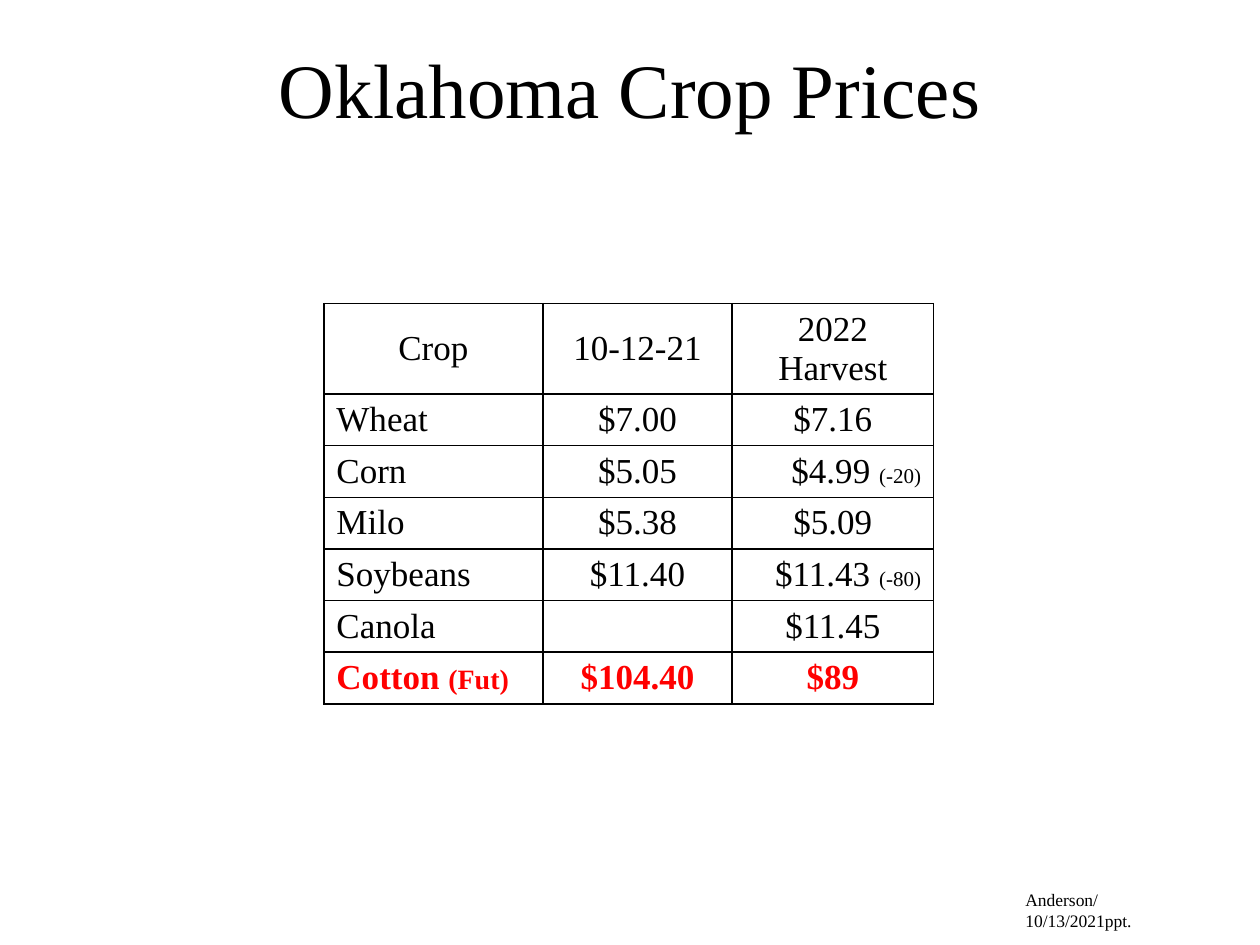
import pptx
import pptx.dml.color
import pptx.enum.text
import pptx.oxml
import pptx.oxml.ns
import pptx.util

Inches = pptx.util.Inches
Pt = pptx.util.Pt
ALIGN = pptx.enum.text.PP_ALIGN
ANCHOR = pptx.enum.text.MSO_ANCHOR

COLORS = {"text": "000000", "highlight": "FF0000", "border": "000000"}
FONT = "Times New Roman"
COLUMN_WIDTHS = [1.74, 1.5, 1.6]
HEADER_HEIGHT, ROW_HEIGHT = 0.71, 0.41
HEADER_MARGIN, ROW_MARGIN = 0, 0.02
PRICES = [
    ["Crop", "10-12-21", "2022 Harvest"],
    ["Wheat", "$7.00", "$7.16"],
    ["Corn", "$5.05", ("$4.99 ", "(-20)")],
    ["Milo", "$5.38", "$5.09"],
    ["Soybeans", "$11.40", ("$11.43 ", "(-80)")],
    ["Canola", "", "$11.45"],
    [("Cotton ", "(Fut)"), "$104.40", "$89"],
]


def add_run(paragraph, text, size, color="text", bold=False):
    """Append a formatted run to a paragraph."""
    run = paragraph.add_run()
    run.text = text
    for name, value in {"name": FONT, "size": Pt(size), "bold": bold}.items():
        setattr(run.font, name, value)
    run.font.color.rgb = pptx.dml.color.RGBColor.from_string(COLORS[color])


def add_borders(cell):
    """Draw a thin line on all four sides of a cell."""
    properties = cell._tc.get_or_add_tcPr()
    for index, side in enumerate(["lnL", "lnR", "lnT", "lnB"]):
        line = pptx.oxml.parse_xml(
            f'<a:{side} {pptx.oxml.ns.nsdecls("a")} w="12700"><a:solidFill>'
            f'<a:srgbClr val="{COLORS["border"]}"/></a:solidFill></a:{side}>'
        )
        properties.insert(index, line)


def fill_cell(cell, content, alignment, highlighted):
    """Write a main text and an optional smaller note into a cell."""
    cell.fill.background()
    add_borders(cell)
    paragraph = cell.text_frame.paragraphs[0]
    paragraph.alignment = alignment
    main_text, note = content if isinstance(content, tuple) else (content, "")
    color = "highlight" if highlighted else "text"
    if main_text:
        add_run(paragraph, main_text, 20, color, highlighted)
    if note:
        add_run(paragraph, note, 16 if highlighted else 12, color, highlighted)


def add_title(slide, text):
    """Place and fill the title placeholder."""
    title = slide.shapes.title
    box = {"left": 0.5, "top": 0.07, "width": 9, "height": 1.25}
    for name, value in box.items():
        setattr(title, name, Inches(value))
    title.text_frame.vertical_anchor = ANCHOR.MIDDLE
    paragraph = title.text_frame.paragraphs[0]
    paragraph.alignment = ALIGN.CENTER
    add_run(paragraph, text, 44)


def add_price_table(slide):
    """Add the crop price table."""
    heights = [HEADER_HEIGHT] + [ROW_HEIGHT] * (len(PRICES) - 1)
    table = slide.shapes.add_table(
        len(PRICES), len(COLUMN_WIDTHS), Inches(2.57), Inches(2.41),
        Inches(sum(COLUMN_WIDTHS)), Inches(sum(heights)),
    ).table
    table.first_row = table.horz_banding = False
    for column, width in zip(table.columns, COLUMN_WIDTHS):
        column.width = Inches(width)
    for row_index, (row, height) in enumerate(zip(table.rows, heights)):
        row.height = Inches(height)
        for column_index, content in enumerate(PRICES[row_index]):
            cell = row.cells[column_index]
            alignment = ALIGN.CENTER
            if row_index and column_index == 0:
                alignment = ALIGN.LEFT
            elif isinstance(content, tuple):
                alignment = ALIGN.RIGHT
            fill_cell(cell, content, alignment, row_index == len(PRICES) - 1)
            if row_index == 0 and column_index < 2:
                cell.vertical_anchor = ANCHOR.MIDDLE
            else:
                cell.margin_bottom = Inches(ROW_MARGIN if row_index else HEADER_MARGIN)


def add_credit(slide, text):
    """Add the small author and date note."""
    box = slide.shapes.add_textbox(Inches(8.04), Inches(7.01), Inches(1.57), Inches(0.27))
    box.text_frame.word_wrap = True
    add_run(box.text_frame.paragraphs[0], text, 10)


def main():
    """Build and save the slide."""
    presentation = pptx.Presentation()
    presentation.slide_width = Inches(10)
    presentation.slide_height = Inches(7.5)
    slide = presentation.slides.add_slide(presentation.slide_layouts[5])
    add_credit(slide, "Anderson/10/13/2021ppt.")
    add_title(slide, "Oklahoma Crop Prices")
    add_price_table(slide)
    presentation.save("out.pptx")


if __name__ == "__main__":
    main()
